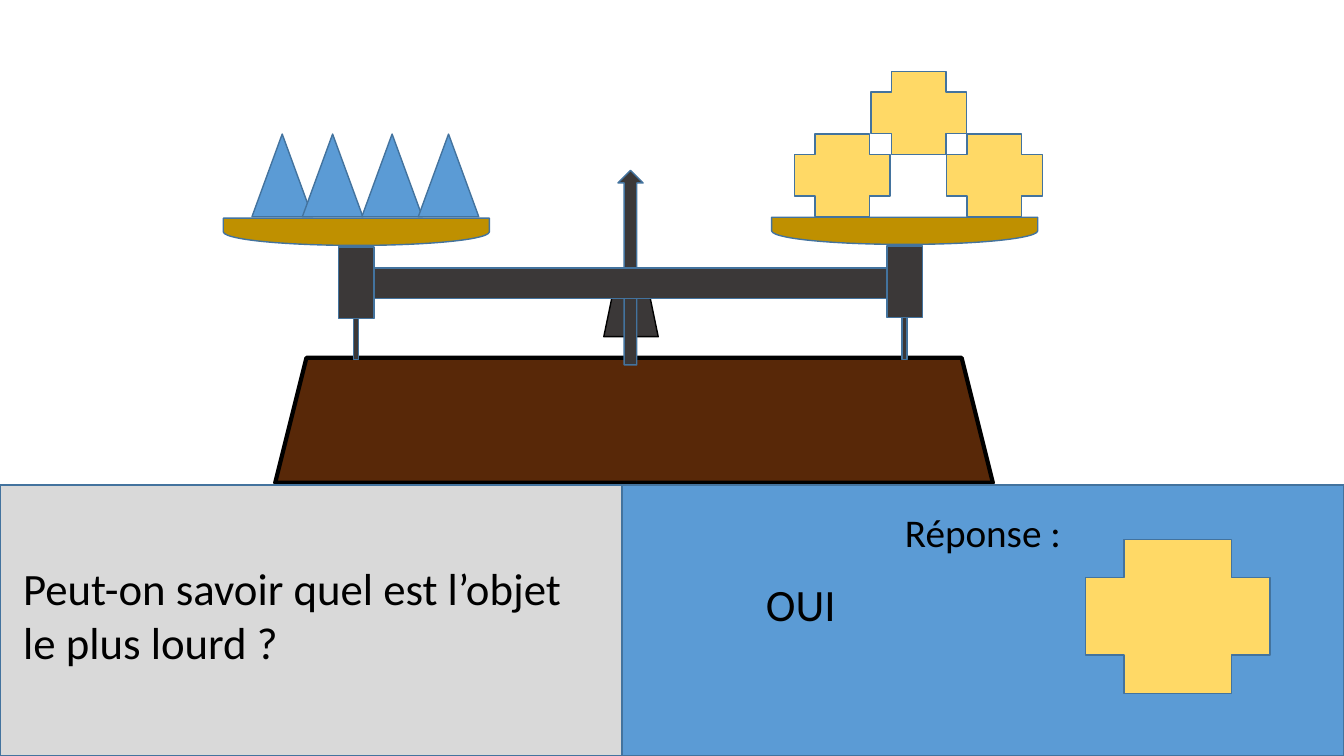
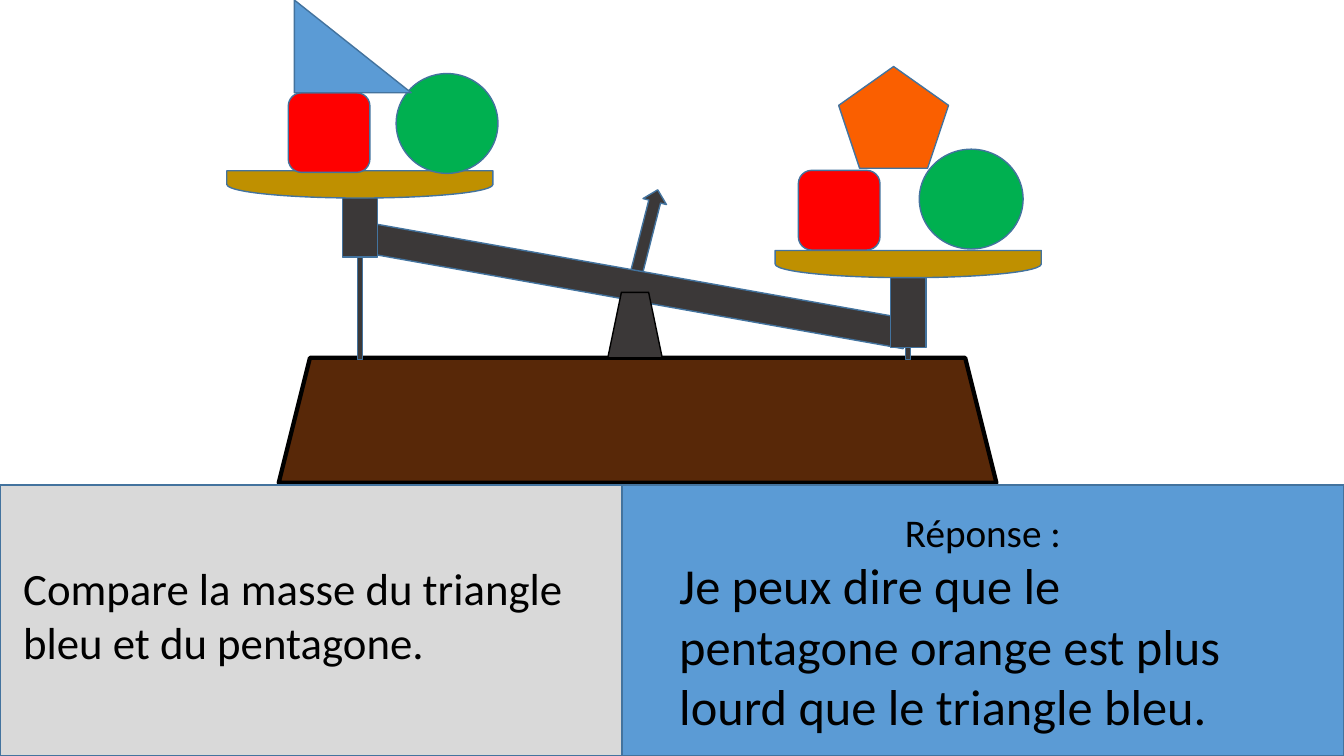
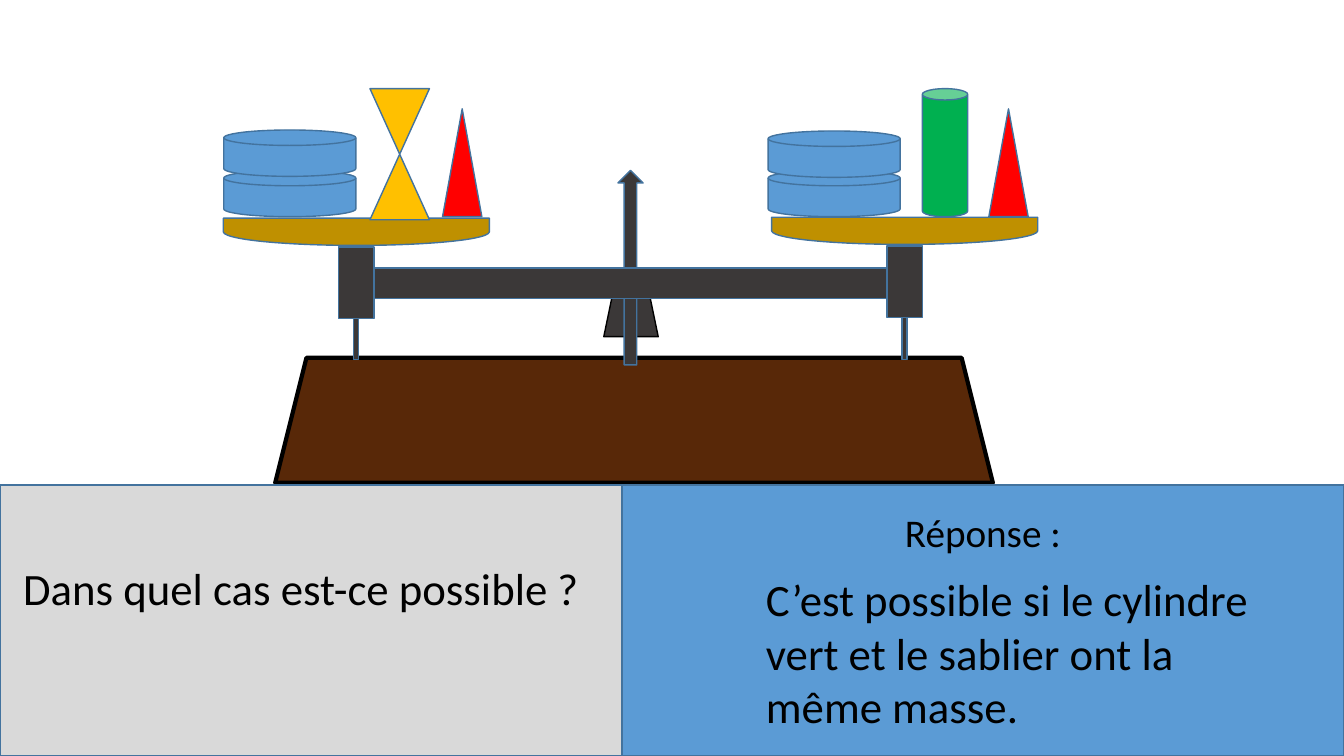
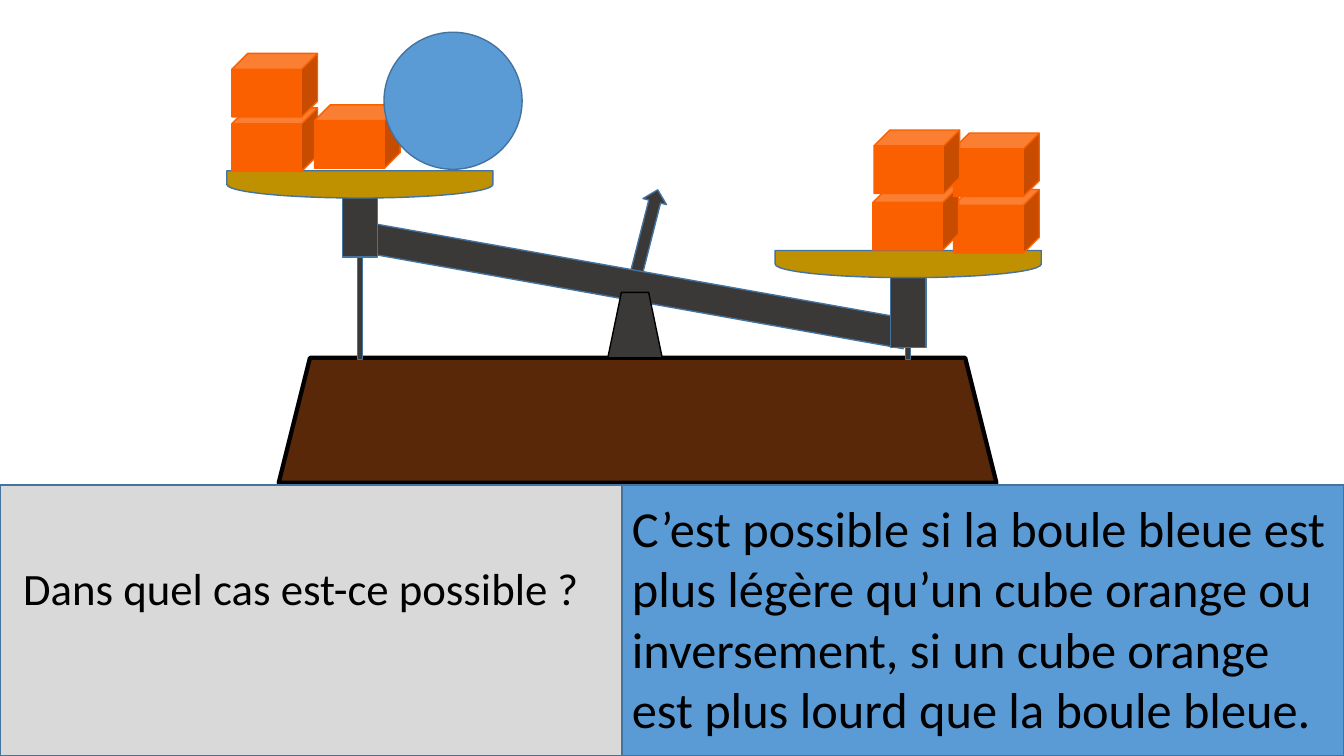
from dataclasses import dataclass

from pptx import Presentation
from pptx.dml.color import RGBColor
from pptx.enum.shapes import MSO_SHAPE
from pptx.enum.text import MSO_ANCHOR, MSO_AUTO_SIZE, PP_ALIGN
from pptx.util import Inches, Pt

RECT = MSO_SHAPE.RECTANGLE
TRAPEZOID = MSO_SHAPE.TRAPEZOID
ARROW = MSO_SHAPE.UP_ARROW
DELAY = MSO_SHAPE.FLOWCHART_DELAY
TRIANGLE = MSO_SHAPE.ISOSCELES_TRIANGLE
RIGHT_TRIANGLE = MSO_SHAPE.RIGHT_TRIANGLE
PLUS = MSO_SHAPE.CROSS
ROUNDED = MSO_SHAPE.ROUNDED_RECTANGLE
ELLIPSE = MSO_SHAPE.OVAL
PENTAGON = MSO_SHAPE.REGULAR_PENTAGON
DISK = MSO_SHAPE.FLOWCHART_MAGNETIC_DISK
HOURGLASS = MSO_SHAPE.FLOWCHART_COLLATE
CYLINDER = MSO_SHAPE.CAN
CUBE = MSO_SHAPE.CUBE
TOP = MSO_ANCHOR.TOP
LEFT, CENTER = PP_ALIGN.LEFT, PP_ALIGN.CENTER
NO_FIT = MSO_AUTO_SIZE.NONE

# The slide is a grid of square cells
CELL = Inches(0.1)
COLUMNS, ROWS = 133.33, 75
TITLE_ONLY = 5


@dataclass(frozen=True)
class Theme:
    font: str = "Calibri"
    text: str = "000000"
    outline: str = "43739E"
    black: str = "000000"
    metal: str = "3B3838"
    wood: str = "582808"
    brass: str = "BF9000"
    gray: str = "D9D9D9"
    blue: str = "5B9BD5"
    red: str = "FF0000"
    green: str = "00B050"
    orange: str = "FA5F00"
    gold: str = "FFC000"
    yellow: str = "FFD966"
    label_size: int = 28
    body_size: int = 32
    large_size: int = 36
    thin: int = 1
    thick: int = 3


THEME = Theme()


@dataclass(frozen=True)
class Box:
    col: float
    row: float
    cols: float
    rows: float

    def inner(self, col, row, cols, rows):
        """Box placed from this box's top left corner."""
        return Box(self.col + col, self.row + row, cols, rows)

    def turned(self):
        """Unrotated frame that fills this box after a quarter turn."""
        shift = (self.cols - self.rows) / 2
        return Box(self.col + shift, self.row - shift, self.rows, self.cols)

    def lengths(self):
        return [round(n * CELL) for n in (self.col, self.row, self.cols, self.rows)]


QUESTION_PANEL = Box(0, 48.1, COLUMNS, ROWS - 48.1)
ANSWER_PANEL = Box(61.7, 48.1, COLUMNS - 61.7, ROWS - 48.1)


@dataclass(frozen=True)
class Arm:
    pan_row: float
    post_row: float
    rod_row: float


@dataclass(frozen=True)
class Pose:
    """Everything that changes when the balance tips."""
    box: Box
    pivot: tuple
    pivot_in_front: bool
    needle: tuple
    needle_angle: float
    beam: tuple
    beam_angle: float
    arms: tuple


LEVEL = Pose(Box(27.3, 16.9, 71.2, 31), (32.6, 10), False,
             (34, 0, 2.5, 19.3), 0, (7.2, 9.7), 0,
             (Arm(4.75, 7.6, 7.6), Arm(4.65, 7.5, 7.5)))
TILTED = Pose(Box(27.65, 16.9, 71.2, 31), (32.65, 12.1), True,
              (35.35, 1.8, 2.4, 8.5), 14.3, (6.55, 9.8), 10.1,
              (Arm(0.05, 1.5, 7.6), Arm(7.95, 10.5, 8.6)))


@dataclass(frozen=True)
class Item:
    """Object on a pan; lift is its height above the top of the pan."""
    kind: int
    col: float
    lift: float
    cols: float
    rows: float
    fill: str
    line: str = THEME.outline


def add_figure(page, kind, box, fill, line=THEME.outline, width=THEME.thin, angle=0):
    shape = page.shapes.add_shape(kind, *box.lengths())
    shape.shadow.inherit = False
    shape.fill.solid()
    shape.fill.fore_color.rgb = RGBColor.from_string(fill)
    shape.line.color.rgb = RGBColor.from_string(line)
    shape.line.width = Pt(width)
    shape.rotation = angle
    return shape


def write(shape, text, size, align=LEFT):
    frame = shape.text_frame
    frame.text = text
    frame.word_wrap = True
    frame.auto_size = NO_FIT
    frame.vertical_anchor = TOP
    for para in frame.paragraphs:
        para.alignment = align
        for span in para.runs:
            span.font.name = THEME.font
            span.font.size = Pt(size)
            span.font.color.rgb = RGBColor.from_string(THEME.text)


def draw_balance(page, pose):
    """Draw the balance and return the boxes of its two pans."""
    box = pose.box
    pivot = box.inner(*pose.pivot, 5.4, 6.5)
    if not pose.pivot_in_front:
        add_figure(page, TRAPEZOID, pivot, THEME.metal, THEME.black)
    add_figure(page, TRAPEZOID, box.inner(0, 18.6, box.cols, 12.4),
               THEME.wood, THEME.black, THEME.thick)
    add_figure(page, ARROW, box.inner(*pose.needle), THEME.metal, angle=pose.needle_angle)
    add_figure(page, RECT, box.inner(*pose.beam, 56.1, 3), THEME.metal, angle=pose.beam_angle)

    # Rod, post and pan at each end of the beam
    pans = []
    for index, arm in enumerate(pose.arms):
        end = box.inner(index * 54.4, 0, 0, 0)
        add_figure(page, RECT, end.inner(7.8, arm.rod_row, 0.5, 18.75 - arm.rod_row), THEME.metal)
        add_figure(page, RECT, end.inner(6.3, arm.post_row, 3.5, 7.1), THEME.metal)
        pan = end.inner(-5.15, arm.pan_row, 26.4, 2.7)
        add_figure(page, DELAY, pan.turned(), THEME.brass, angle=90)
        pans.append(pan)
    if pose.pivot_in_front:
        add_figure(page, TRAPEZOID, pivot, THEME.metal, THEME.black)
    return pans


def load_pan(page, pan, items):
    for item in items:
        place = pan.inner(item.col, -item.lift - item.rows, item.cols, item.rows)
        add_figure(page, item.kind, place, item.fill, item.line)


def draw_question(page, box, text, size):
    add_figure(page, RECT, box, THEME.gray)
    title = page.shapes.title
    title.left, title.top, title.width, title.height = box.inner(1.3, 7, *size).lengths()
    write(title, text, THEME.body_size)
    # Bring the title in front of its panel
    page.shapes.element.append(title.element)


def draw_answer(page, box, text, place, size, labelled=True):
    panel = add_figure(page, RECT, box, THEME.blue)
    if labelled:
        write(panel, "Réponse :", THEME.label_size, CENTER)
        panel.text_frame.margin_top = round(2.3 * CELL)
    answer = page.shapes.add_textbox(*box.inner(*place).lengths())
    write(answer, text, size)


def add_exercise(deck, pose, loads, question, question_size, answer):
    page = deck.slides.add_slide(deck.slide_layouts[TITLE_ONLY])
    pans = draw_balance(page, pose)
    draw_question(page, QUESTION_PANEL, question, question_size)
    draw_answer(page, ANSWER_PANEL, *answer)
    for pan, items in zip(pans, loads):
        load_pan(page, pan, items)
    return page


# Objects that occur several times
def cone(col, lift):
    return Item(TRIANGLE, col, lift, 3.9, 10.7, THEME.red)


def square(col, lift):
    return Item(ROUNDED, col, lift, 8.1, 7.9, THEME.red)


def cube(col, lift):
    return Item(CUBE, col, lift, 8.5, 6.3, THEME.orange, THEME.orange)


def disks(col, *lifts):
    return [Item(DISK, col, lift, 13.1, 4.6, THEME.blue) for lift in lifts]


def main():
    deck = Presentation()
    deck.slide_width = round(COLUMNS * CELL)
    deck.slide_height = round(ROWS * CELL)
    one_line, two_lines = (60, 6.4), (55.9, 11.8)

    # Triangles against crosses
    triangles = [Item(TRIANGLE, col, 0.15, 6, 8.2, THEME.blue)
                 for col in (2.85, 7.85, 13.75, 19.35)]
    crosses = [Item(PLUS, col, lift, 9.5, 8.2, THEME.yellow)
               for col, lift in ((2.25, 0.05), (9.85, 6.25), (17.35, 0.05))]
    page = add_exercise(
        deck, LEVEL, (triangles, crosses),
        "Peut-on savoir quel est l’objet le plus lourd ?", two_lines,
        ("OUI", (13.3, 8.6, 15.6, 6.4), THEME.body_size))
    add_figure(page, PLUS, ANSWER_PANEL.inner(46, 5.4, 18.3, 15.3), THEME.yellow)

    # Triangle against pentagon
    add_exercise(
        deck, TILTED,
        ([square(6.1, -0.15),
          Item(ELLIPSE, 16.8, -0.25, 10.1, 9.9, THEME.green),
          Item(RIGHT_TRIANGLE, 6.7, 7.75, 11.6, 9.2, THEME.blue)],
         [square(2.3, 0.05),
          Item(ELLIPSE, 14.3, 0.15, 10.3, 9.9, THEME.green),
          Item(PENTAGON, 6.3, 8.15, 10.9, 10.1, THEME.orange)]),
        "Compare la masse du triangle bleu et du pentagone.", two_lines,
        ("Je peux dire que le pentagone orange est plus lourd que le triangle bleu.",
         (4.7, 6.4, 61.6, 19.2), THEME.large_size))

    # Hourglass against cylinder
    possible = "Dans quel cas est-ce possible ?"
    add_exercise(
        deck, LEVEL,
        (disks(0.05, 0.15, 4.15) + [
            Item(HOURGLASS, 14.55, -0.15, 5.9, 13, THEME.gold), cone(21.75, 0.15)],
         disks(-0.35, 0.05, 3.95) + [
            Item(CYLINDER, 14.95, 0.05, 4.5, 12.7, THEME.green), cone(21.55, 0.05)]),
        possible, one_line,
        ("C’est possible si le cylindre vert et le sablier ont la même masse.",
         (13.3, 8.1, 54.8, 17.2), THEME.body_size))

    # Ball against cubes
    add_exercise(
        deck, TILTED,
        ([cube(0.5, -0.05), cube(8.7, 0.25), cube(0.5, 5.35),
          Item(ELLIPSE, 15.6, 0.15, 13.7, 13.6, THEME.blue)],
         [cube(17.7, -0.25), cube(9.7, 0.05), cube(17.7, 5.35), cube(9.8, 5.65)]),
        possible, one_line,
        ("C’est possible si la boule bleue est plus légère qu’un cube orange ou "
         "inversement, si un cube orange est plus lourd que la boule bleue.",
         (0, 0.7, ANSWER_PANEL.cols, 25.2), THEME.large_size, False))

    deck.save("out.pptx")


if __name__ == "__main__":
    main()
